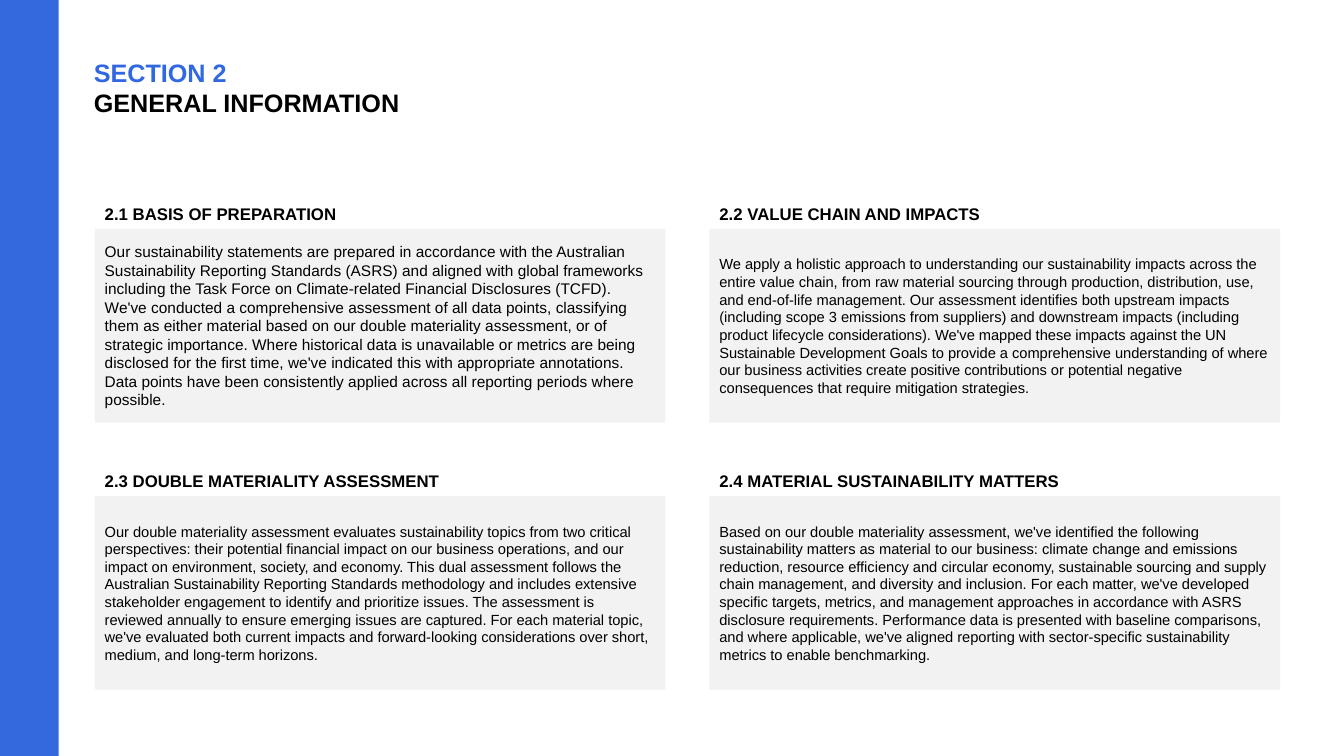
from pptx import Presentation
from pptx.dml.color import RGBColor
from pptx.enum.shapes import MSO_SHAPE
from pptx.enum.text import MSO_ANCHOR, MSO_AUTO_SIZE, PP_ALIGN
from pptx.util import Cm, Pt

RECT = MSO_SHAPE.RECTANGLE
LEFT, MIDDLE, TOP = PP_ALIGN.LEFT, MSO_ANCHOR.MIDDLE, MSO_ANCHOR.TOP
NO_FIT = MSO_AUTO_SIZE.NONE

BAR_BLUE = RGBColor(0x34, 0x68, 0xDD)
TITLE_BLUE = RGBColor(0x31, 0x68, 0xE2)
BLACK = RGBColor(0, 0, 0)
PANEL_GREY = RGBColor(0xF2, 0xF2, 0xF2)

PANEL_LEFT, HEADING_TOP = 2.39, 5.0
PANEL_WIDTH, PANEL_HEIGHT, HEADING_HEIGHT = 14.38, 4.88, 0.77
COLUMN_STEP, ROW_STEP = 15.49, 6.73

TOPICS = [
    ("2.1 BASIS OF PREPARATION", 11,
     "Our sustainability statements are prepared in accordance with the Australian "
     "Sustainability Reporting Standards (ASRS) and aligned with global frameworks "
     "including the Task Force on Climate-related Financial Disclosures (TCFD). "
     "We've conducted a comprehensive assessment of all data points, classifying "
     "them as either material based on our double materiality assessment, or of "
     "strategic importance. Where historical data is unavailable or metrics are being "
     "disclosed for the first time, we've indicated this with appropriate annotations. "
     "Data points have been consistently applied across all reporting periods where "
     "possible."),
    ("2.2 VALUE CHAIN AND IMPACTS", 10.5,
     "We apply a holistic approach to understanding our sustainability impacts across the "
     "entire value chain, from raw material sourcing through production, distribution, use, "
     "and end-of-life management. Our assessment identifies both upstream impacts "
     "(including scope 3 emissions from suppliers) and downstream impacts (including "
     "product lifecycle considerations). We've mapped these impacts against the UN "
     "Sustainable Development Goals to provide a comprehensive understanding of where "
     "our business activities create positive contributions or potential negative "
     "consequences that require mitigation strategies."),
    ("2.3 DOUBLE MATERIALITY ASSESSMENT", 10.5,
     "Our double materiality assessment evaluates sustainability topics from two critical "
     "perspectives: their potential financial impact on our business operations, and our "
     "impact on environment, society, and economy. This dual assessment follows the "
     "Australian Sustainability Reporting Standards methodology and includes extensive "
     "stakeholder engagement to identify and prioritize issues. The assessment is "
     "reviewed annually to ensure emerging issues are captured. For each material topic, "
     "we've evaluated both current impacts and forward-looking considerations over short, "
     "medium, and long-term horizons."),
    ("2.4 MATERIAL SUSTAINABILITY MATTERS", 10.5,
     "Based on our double materiality assessment, we've identified the following "
     "sustainability matters as material to our business: climate change and emissions "
     "reduction, resource efficiency and circular economy, sustainable sourcing and supply "
     "chain management, and diversity and inclusion. For each matter, we've developed "
     "specific targets, metrics, and management approaches in accordance with ASRS "
     "disclosure requirements. Performance data is presented with baseline comparisons, "
     "and where applicable, we've aligned reporting with sector-specific sustainability "
     "metrics to enable benchmarking."),
]


def add_rect(left, top, width, height, color):
    shape = s.shapes.add_shape(RECT, Cm(left), Cm(top), Cm(width), Cm(height))
    shape.shadow.inherit = False
    shape.fill.solid()
    shape.fill.fore_color.rgb = color
    shape.line.fill.background()
    return shape


def format_paragraph(p, size, color, bold, space_after):
    p.alignment = LEFT
    p.space_after = Pt(space_after)
    p.font.name = "Arial"
    p.font.size = Pt(size)
    p.font.bold = bold
    p.font.color.rgb = color


prs = Presentation()
prs.slide_width, prs.slide_height = Cm(33.87), Cm(19.05)
s = prs.slides.add_slide(prs.slide_layouts[5])

add_rect(0, 0, 1.48, 19.05, BAR_BLUE)

title = s.shapes.title
title.left, title.top, title.width, title.height = Cm(2.11), Cm(1.32), Cm(16.97), Cm(1.8)
tf = title.text_frame
tf.text = "SECTION 2\nGENERAL INFORMATION"
tf.auto_size = NO_FIT
tf.vertical_anchor = TOP
for p, color in zip(tf.paragraphs, (TITLE_BLUE, BLACK)):
    format_paragraph(p, 18, color, True, 0)

for i, (heading, size, body) in enumerate(TOPICS):
    row, column = divmod(i, 2)
    left = PANEL_LEFT + column * COLUMN_STEP
    top = HEADING_TOP + row * ROW_STEP

    box = s.shapes.add_textbox(Cm(left), Cm(top), Cm(PANEL_WIDTH), Cm(HEADING_HEIGHT))
    tf = box.text_frame
    tf.word_wrap = True
    tf.text = heading
    format_paragraph(tf.paragraphs[0], 12, BLACK, True, 6)

    panel = add_rect(left, top + HEADING_HEIGHT, PANEL_WIDTH, PANEL_HEIGHT, PANEL_GREY)
    tf = panel.text_frame
    tf.word_wrap = True
    tf.vertical_anchor = MIDDLE
    tf.text = body
    format_paragraph(tf.paragraphs[0], size, BLACK, False, 6)

prs.save("out.pptx")
